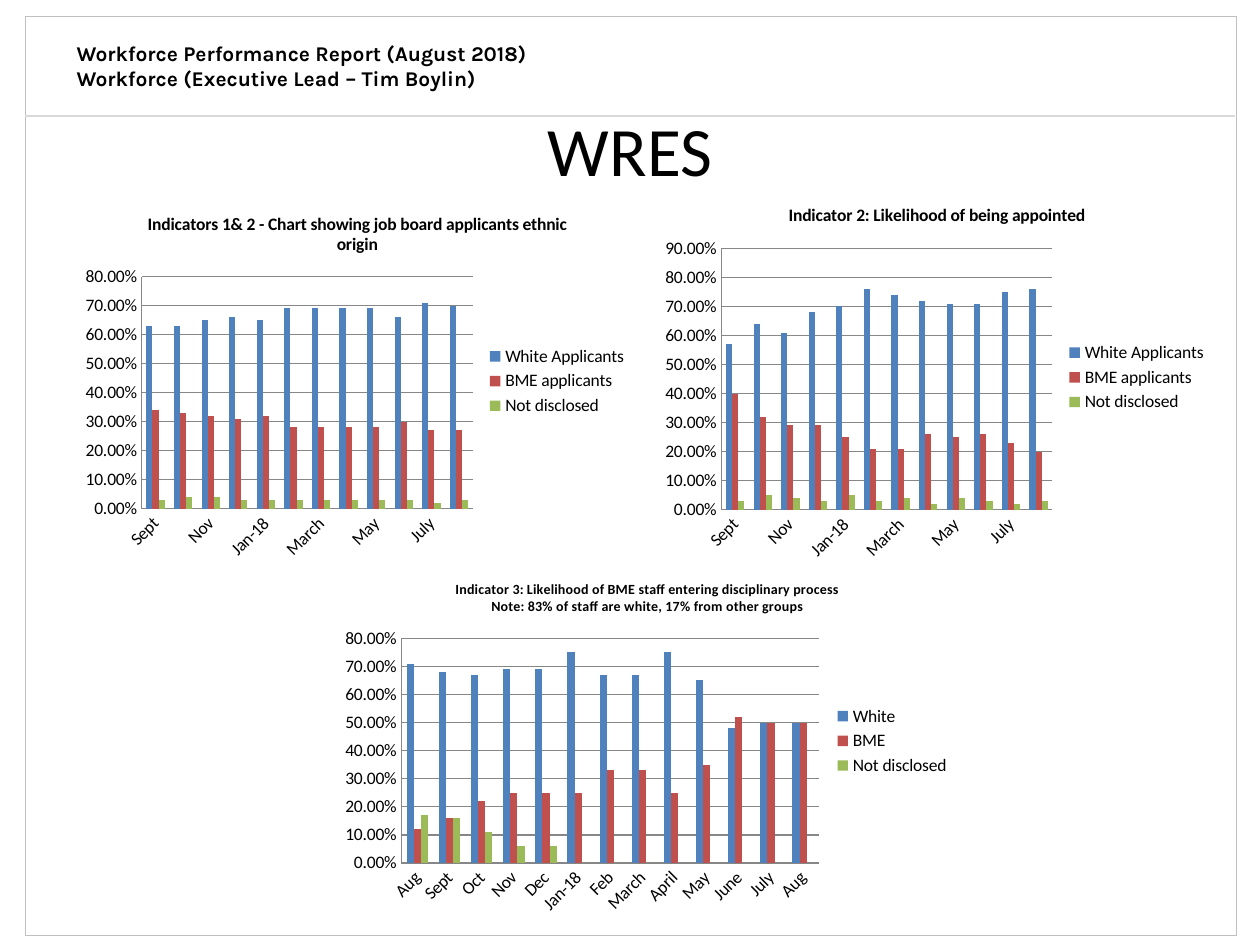
from pptx import Presentation
from pptx.chart.data import CategoryChartData
from pptx.dml.color import RGBColor
from pptx.enum.chart import XL_CHART_TYPE, XL_LEGEND_POSITION, XL_TICK_MARK
from pptx.enum.shapes import MSO_CONNECTOR, MSO_SHAPE
from pptx.enum.text import MSO_ANCHOR, PP_ALIGN
from pptx.oxml.ns import qn
from pptx.util import Pt
from lxml.etree import SubElement

COLORS = {
    "text": "000000", "frame": "BFBFBF", "rule": "D9D9D9", "grid": "878787",
    "white": "4F81BD", "bme": "C0504D", "undisclosed": "9BBB59",
}


def color(name):
    return RGBColor.from_string(COLORS[name])


def format_font(font, **values):
    font.color.rgb = color("text")
    for name, value in values.items():
        setattr(font, name, value)


deck = Presentation()
deck.slide_width, deck.slide_height = Pt(720), Pt(540)
page = deck.slides.add_slide(deck.slide_layouts[5])

header = page.shapes.add_textbox(Pt(36.72), Pt(19.44), Pt(360), Pt(36))
header.text_frame.word_wrap = True
para = header.text_frame.paragraphs[0]
para.text = "Workforce Performance Report (August 2018)\nWorkforce (Executive Lead – Tim Boylin)"
for span in para.runs:
    format_font(span.font, name="Karla", size=Pt(12), bold=True)

frame = page.shapes.add_shape(MSO_SHAPE.RECTANGLE, Pt(14.4), Pt(9.36), Pt(691.92), Pt(524.88))
frame.shadow.inherit = False
frame.fill.background()
frame.line.color.rgb = color("frame")
frame.line.width = Pt(0.25)

rule = page.shapes.add_connector(MSO_CONNECTOR.STRAIGHT, Pt(14.4), Pt(66.24), Pt(705.6), Pt(66.24))
rule.line.color.rgb = color("rule")
rule.line.width = Pt(0.75)
SubElement(rule.element.spPr, qn("a:effectLst"))

title = page.shapes.title
for name, value in {"left": 36, "top": 105.84, "width": 648, "height": 5.76}.items():
    setattr(title, name, Pt(value))
title.text_frame.text = "WRES"
title.text_frame.vertical_anchor = MSO_ANCHOR.BOTTOM
para = title.text_frame.paragraphs[0]
para.alignment = PP_ALIGN.CENTER
format_font(para.runs[0].font, name="Calibri", size=Pt(39.6))

months = ["Sept", "Oct", "Nov", "Dec", "Jan-18", "Feb", "March", "April", "May", "June", "July", "Aug"]
applicants = ["White Applicants", "BME applicants", "Not disclosed"]
charts = [
    {
        "title": "Indicators 1& 2 - Chart showing job board applicants ethnic origin",
        "title_size": 10, "place": (42.48, 111.6, 323.28, 212.4), "top_value": 0.8,
        "months": months, "groups": applicants,
        "values": [
            [0.63, 0.63, 0.65, 0.66, 0.65, 0.69, 0.69, 0.69, 0.69, 0.66, 0.71, 0.7],
            [0.34, 0.33, 0.32, 0.31, 0.32, 0.28, 0.28, 0.28, 0.28, 0.3, 0.27, 0.27],
            [0.03, 0.04, 0.04, 0.03, 0.03, 0.03, 0.03, 0.03, 0.03, 0.03, 0.02, 0.03],
        ],
    },
    {
        "title": "Indicator 2: Likelihood of being appointed",
        "title_size": 10, "place": (373.68, 106.56, 323.28, 218.16), "top_value": 0.9,
        "months": months, "groups": applicants,
        "values": [
            [0.57, 0.64, 0.61, 0.68, 0.7, 0.76, 0.74, 0.72, 0.71, 0.71, 0.75, 0.76],
            [0.4, 0.32, 0.29, 0.29, 0.25, 0.21, 0.21, 0.26, 0.25, 0.26, 0.23, 0.2],
            [0.03, 0.05, 0.04, 0.03, 0.05, 0.03, 0.04, 0.02, 0.04, 0.03, 0.02, 0.03],
        ],
    },
    {
        "title": "Indicator 3: Likelihood of BME staff entering disciplinary process\n"
                 "Note: 83% of staff are white, 17% from other groups",
        "title_size": 8, "place": (190.08, 320.4, 360, 205.92), "top_value": 0.8,
        "months": ["Aug"] + months, "groups": ["White", "BME", "Not disclosed"],
        "values": [
            [0.71, 0.68, 0.67, 0.69, 0.69, 0.75, 0.67, 0.67, 0.75, 0.65, 0.48, 0.5, 0.5],
            [0.12, 0.16, 0.22, 0.25, 0.25, 0.25, 0.33, 0.33, 0.25, 0.35, 0.52, 0.5, 0.5],
            [0.17, 0.16, 0.11, 0.06, 0.06, 0, 0, 0] + [None] * 5,
        ],
    },
]

for details in charts:
    data = CategoryChartData(number_format="0.00%")
    data.categories = details["months"]
    for group, values in zip(details["groups"], details["values"]):
        data.add_series(group, values)
    place = [Pt(length) for length in details["place"]]
    chart = page.shapes.add_chart(XL_CHART_TYPE.COLUMN_CLUSTERED, *place, data).chart
    format_font(chart.font, name="Calibri", size=Pt(10))

    chart.has_title = True
    para = chart.chart_title.text_frame.paragraphs[0]
    para.text = details["title"]
    for span in para.runs:
        format_font(span.font, name="Calibri", size=Pt(details["title_size"]), bold=True)
    chart.chart_title.include_in_layout = False

    chart.has_legend = True
    chart.legend.position = XL_LEGEND_POSITION.RIGHT
    chart.legend.include_in_layout = False

    for axis in (chart.category_axis, chart.value_axis):
        axis.major_tick_mark = axis.minor_tick_mark = XL_TICK_MARK.NONE
        axis.format.line.color.rgb = color("grid")
    scale = chart.value_axis
    scale.minimum_scale, scale.maximum_scale, scale.major_unit = 0, details["top_value"], 0.1
    scale.tick_labels.number_format = "0.00%"
    scale.tick_labels.number_format_is_linked = False
    scale.has_major_gridlines = True
    scale.major_gridlines.format.line.color.rgb = color("grid")

    plot = chart.plots[0]
    plot.gap_width, plot.overlap, plot.vary_by_categories = 150, 0, False
    for series, name in zip(plot.series, ("white", "bme", "undisclosed")):
        series.invert_if_negative = False
        series.format.fill.solid()
        series.format.fill.fore_color.rgb = color(name)

deck.save("out.pptx")
